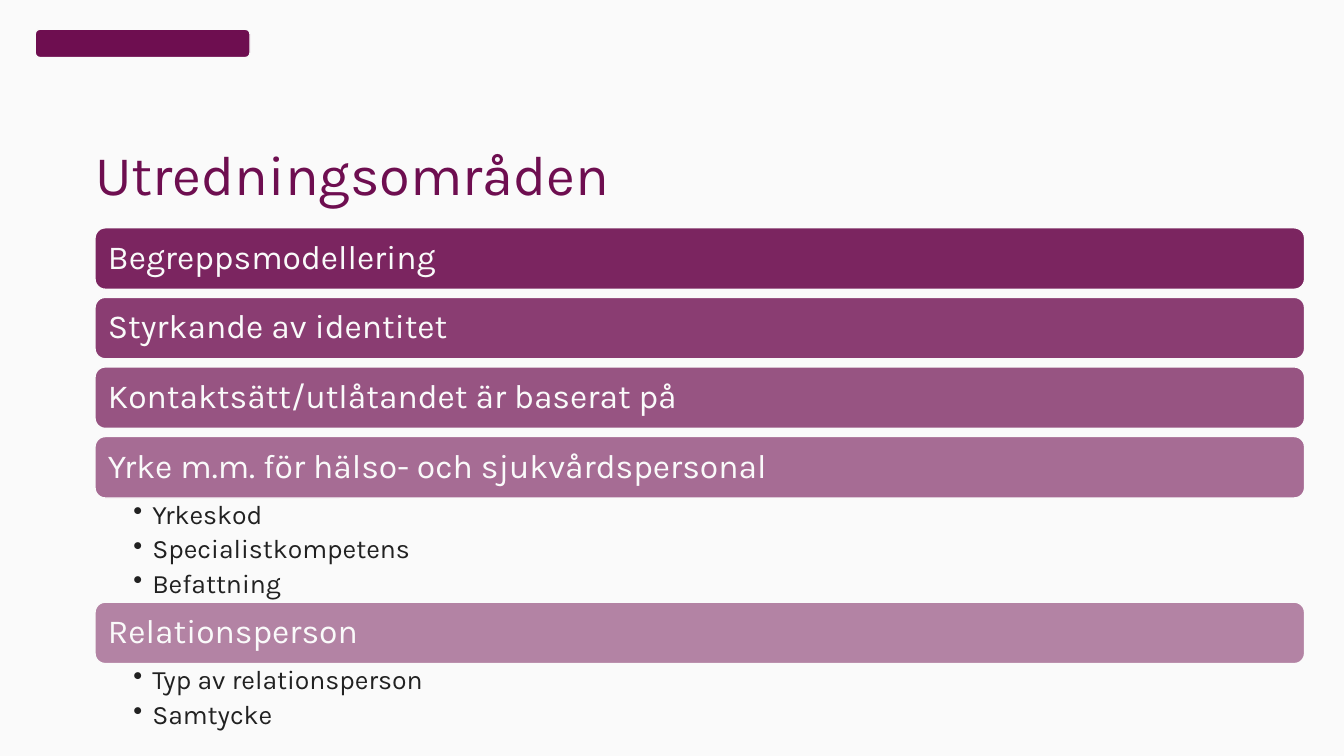
from lxml import etree
from pptx import Presentation
from pptx.dml.color import RGBColor
from pptx.enum.shapes import MSO_SHAPE
from pptx.enum.text import MSO_ANCHOR, PP_ALIGN
from pptx.oxml.ns import qn
from pptx.util import Pt

ROUNDED = MSO_SHAPE.ROUNDED_RECTANGLE
TOP, MIDDLE, BOTTOM = MSO_ANCHOR.TOP, MSO_ANCHOR.MIDDLE, MSO_ANCHOR.BOTTOM
LEFT = PP_ALIGN.LEFT

PLUM = RGBColor(0x6E, 0x0E, 0x50)
PAPER = RGBColor(0xFA, 0xFA, 0xFA)
INK = RGBColor(0x21, 0x21, 0x21)
FONT = "Karla"

BAR_HEIGHT = 43.9
BAR_GAP = 5.8
BULLET_HEIGHT = 24.8
BULLET_INDENT = 13.5

AREAS = [
    ("Begreppsmodellering", []),
    ("Styrkande av identitet", []),
    ("Kontaktsätt/utlåtandet är baserat på", []),
    ("Yrke m.m. för hälso- och sjukvårdspersonal",
     ["Yrkeskod", "Specialistkompetens", "Befattning"]),
    ("Relationsperson", ["Typ av relationsperson", "Samtycke"]),
]


def write_text(shape, lines, size, color, anchor=TOP, margins=(0, 0, 0, 0),
               bullets=False, space_after=0):
    """Fill a shape with one paragraph per line; margins are left, top, right, bottom."""
    frame = shape.text_frame
    frame.word_wrap = True
    frame.vertical_anchor = anchor
    (frame.margin_left, frame.margin_top,
     frame.margin_right, frame.margin_bottom) = map(Pt, margins)
    for index, line in enumerate(lines):
        paragraph = frame.paragraphs[0] if index == 0 else frame.add_paragraph()
        paragraph.alignment = LEFT
        paragraph.line_spacing = 0.9
        paragraph.space_after = Pt(space_after)
        run = paragraph.add_run()
        run.text = line
        run.font.name = FONT
        run.font.size = Pt(size)
        run.font.color.rgb = color
        if bullets:
            add_bullet(paragraph)


def add_bullet(paragraph):
    paragraph.level = 1
    properties = paragraph._p.get_or_add_pPr()
    properties.set("marL", str(Pt(BULLET_INDENT)))
    properties.set("indent", str(-Pt(BULLET_INDENT)))
    etree.SubElement(properties, qn("a:buChar"), char="•")


def add_rounded_bar(slide, left, top, width, height, opacity=100):
    bar = slide.shapes.add_shape(ROUNDED, Pt(left), Pt(top), Pt(width), Pt(height))
    bar.shadow.inherit = False
    bar.fill.solid()
    bar.fill.fore_color.rgb = PLUM
    bar.line.color.rgb = PAPER
    bar.line.width = Pt(1)
    color = bar.fill._xPr.find(qn("a:solidFill"))[0]
    etree.SubElement(color, qn("a:alpha"), val=str(opacity * 1000))
    return bar


def add_header(slide, left, top, width, height):
    # Plain mark in the sender's place
    add_rounded_bar(slide, 25.2, 20.9, 153.4, 20.2)
    # Title
    title = slide.shapes.add_textbox(Pt(left), Pt(top), Pt(width), Pt(height))
    write_text(title, ["Utredningsområden"], 40, PLUM, anchor=BOTTOM)


def add_area_list(slide, left, top, width):
    for index, (heading, details) in enumerate(AREAS):
        # Heading bar, paler for each step down
        bar = add_rounded_bar(slide, left, top, width, BAR_HEIGHT, 90 - 10 * index)
        write_text(bar, [heading], 24, PAPER, anchor=MIDDLE, margins=(7.2,) * 4)
        top += BAR_HEIGHT
        if not details:
            top += BAR_GAP
            continue
        # Details under the bar
        height = BULLET_HEIGHT * len(details)
        box = slide.shapes.add_textbox(Pt(left), Pt(top), Pt(width), Pt(height))
        write_text(box, details, 19, INK, margins=(27.4, 2.2, 13.7, 2.2),
                   bullets=True, space_after=4.4)
        top += height


def main():
    presentation = Presentation()
    presentation.slide_width, presentation.slide_height = Pt(960), Pt(540)
    slide = presentation.slides.add_slide(presentation.slide_layouts[6])
    slide.background.fill.solid()
    slide.background.fill.fore_color.rgb = PAPER
    add_header(slide, 67.9, 104.4, 825, 43.9)
    add_area_list(slide, 67.9, 162.7, 864)
    presentation.save("out.pptx")


if __name__ == "__main__":
    main()
